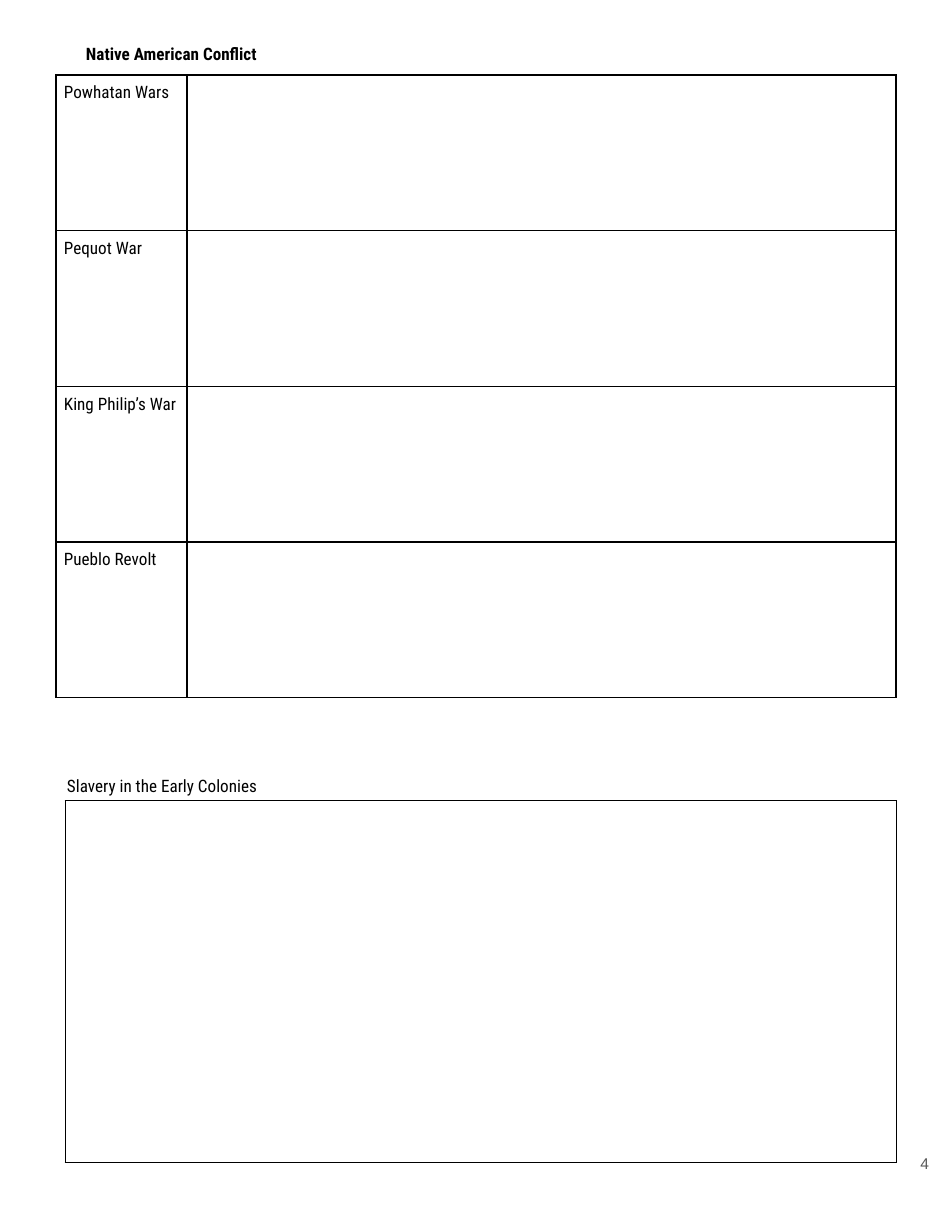
"""Build a worksheet page on early colonial conflicts and slavery."""
from dataclasses import dataclass

from lxml import etree
from pptx import Presentation
from pptx.dml.color import RGBColor
from pptx.enum.text import MSO_ANCHOR, MSO_AUTO_SIZE, PP_ALIGN
from pptx.oxml.ns import qn
from pptx.util import Cm, Pt

TOP, MIDDLE = MSO_ANCHOR.TOP, MSO_ANCHOR.MIDDLE
LEFT, RIGHT = PP_ALIGN.LEFT, PP_ALIGN.RIGHT
NO_FIT = MSO_AUTO_SIZE.NONE
BLACK, WHITE, GRAY = "000000", "FFFFFF", "595959"
FONT = "Roboto Condensed"
TITLE_ONLY = 5
EDGES = ("a:lnL", "a:lnR", "a:lnT", "a:lnB")
WARS = ("Powhatan Wars", "Pequot War", "King Philip’s War", "Pueblo Revolt")


@dataclass
class Label:
    text: str
    left: float
    top: float
    width: float
    height: float
    size: float = 11
    font: str = FONT
    color: str = BLACK
    bold: bool = False
    align: PP_ALIGN = LEFT
    anchor: MSO_ANCHOR = MIDDLE
    spacing: float = 1.15


@dataclass
class Grid:
    left: float
    top: float
    widths: tuple[float, ...]
    height: float
    rows: tuple[str, ...]


TITLE = Label("Native American Conflict", 1.7, 0.84, 8.33, 0.69, bold=True)
LABELS = (
    Label("Slavery in the Early Colonies", 1.27, 17.27, 19.86, 5.92, anchor=TOP),
    Label("4", 20.02, 25.32, 1.3, 2.13, 10, "Arial", GRAY, align=RIGHT, spacing=1),
)
GRIDS = (
    Grid(1.27, 1.7, (2.97, 16.08), 3.53, WARS),
    Grid(1.48, 18.16, (18.85,), 8.2, ("",)),
)


def paint(fill, color: str) -> None:
    """Make a fill solid in the given hex colour."""
    fill.solid()
    fill.fore_color.rgb = RGBColor.from_string(color)


def style(frame, size: float, font: str, color: str, bold: bool = False) -> None:
    """Format every run in a text frame."""
    for para in frame.paragraphs:
        for run in para.runs:
            run.font.name = font
            run.font.size = Pt(size)
            run.font.bold = bold
            paint(run.font.fill, color)


def write(shape, label: Label) -> None:
    """Place a shape and fill it with the label's text."""
    shape.left, shape.top = Cm(label.left), Cm(label.top)
    shape.width, shape.height = Cm(label.width), Cm(label.height)
    frame = shape.text_frame
    frame.text = label.text
    frame.word_wrap = True
    frame.auto_size = NO_FIT
    frame.vertical_anchor = label.anchor
    frame.margin_left = frame.margin_right = Cm(0.25)
    frame.margin_top = frame.margin_bottom = Cm(0.25)
    para = frame.paragraphs[0]
    para.alignment = label.align
    para.line_spacing = label.spacing
    style(frame, label.size, label.font, label.color, label.bold)


def border(cell, color: str) -> None:
    """Give a cell a one-point line on each side."""
    props = cell._tc.get_or_add_tcPr()
    for edge in EDGES:
        line = etree.SubElement(props, qn(edge), w=str(Pt(1)))
        fill = etree.SubElement(line, qn("a:solidFill"))
        etree.SubElement(fill, qn("a:srgbClr"), val=color)


def draw(slide, grid: Grid) -> None:
    """Add a ruled table with row names in its first column."""
    count = len(grid.rows)
    frame = slide.shapes.add_table(
        count, len(grid.widths), Cm(grid.left), Cm(grid.top),
        Cm(sum(grid.widths)), Cm(grid.height * count))
    table = frame.table
    table.first_row = table.horz_banding = False
    for col, width in zip(table.columns, grid.widths):
        col.width = Cm(width)
    for row, name in zip(table.rows, grid.rows):
        row.height = Cm(grid.height)
        row.cells[0].text_frame.text = name
        for cell in row.cells:
            cell.margin_left = cell.margin_right = Cm(0.18)
            cell.margin_top = cell.margin_bottom = Cm(0.18)
            border(cell, BLACK)
            paint(cell.fill, WHITE)
            style(cell.text_frame, 11, FONT, BLACK)


def main() -> None:
    """Build and save the page."""
    deck = Presentation()
    deck.slide_width, deck.slide_height = Cm(21.59), Cm(27.94)
    slide = deck.slides.add_slide(deck.slide_layouts[TITLE_ONLY])
    write(slide.shapes.title, TITLE)
    for label in LABELS:
        write(slide.shapes.add_textbox(0, 0, 0, 0), label)
    for grid in GRIDS:
        draw(slide, grid)
    deck.save("out.pptx")


if __name__ == "__main__":
    main()
